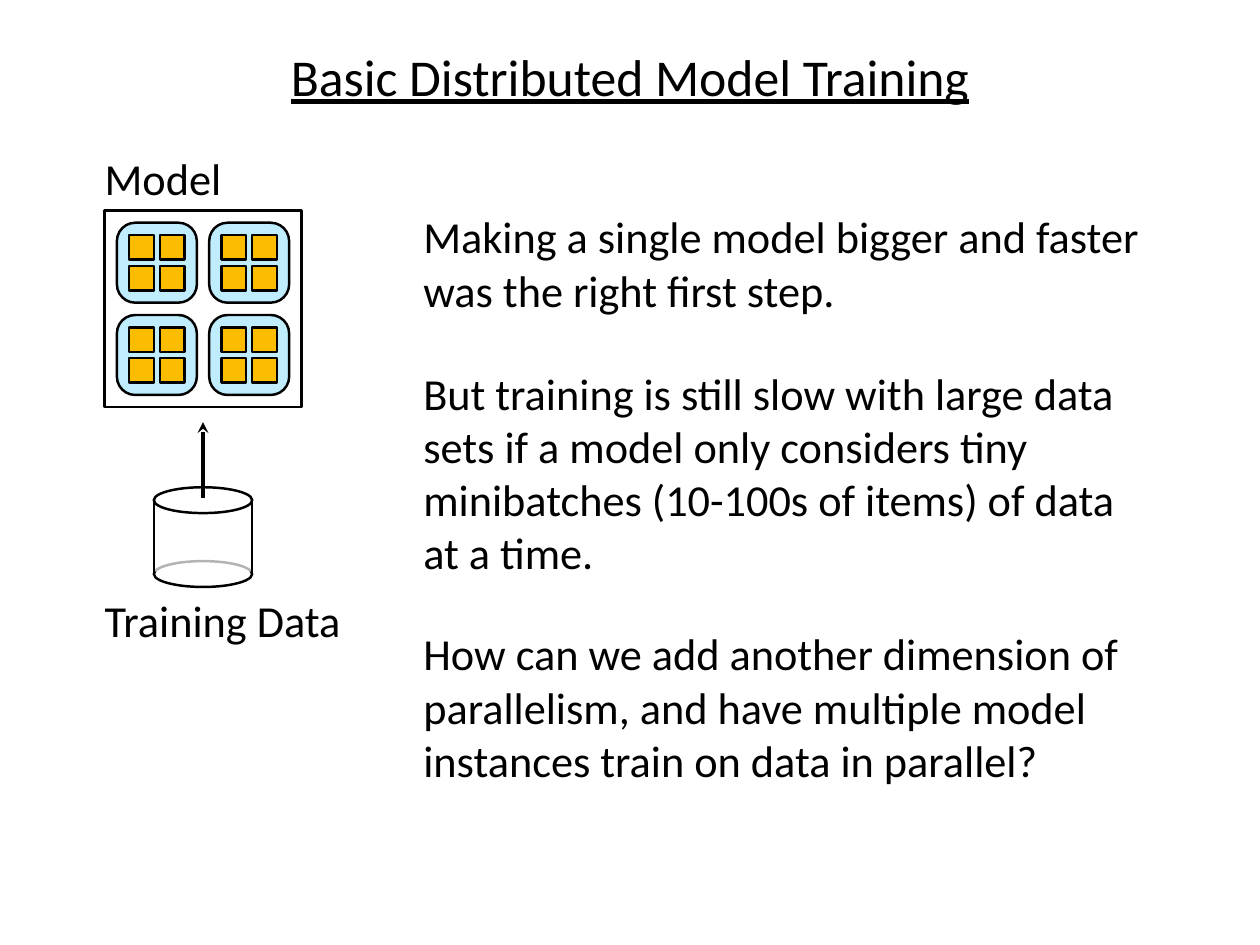
from itertools import product

from lxml import etree
from pptx import Presentation, util as u
from pptx.dml.color import RGBColor
from pptx.enum import shapes, text
from pptx.oxml.ns import qn

HUES = {"ink": "000000", "node": "C0EDFE", "core": "FCBD00", "white": "FFFFFF"}
FONT = "Calibri"
CELL = u.Pt(10)
COLS, ROWS = 102.4, 76.8
KIND = shapes.MSO_SHAPE


def grid(*cells):
    return [u.Emu(round(n * CELL)) for n in cells]


def hue(name):
    return RGBColor.from_string(HUES[name])


def write(frame, words, size=36, align=text.PP_ALIGN.LEFT, under=None):
    frame.word_wrap = True
    frame.vertical_anchor = text.MSO_ANCHOR.MIDDLE
    frame.margin_left = frame.margin_right = 0
    frame.margin_top = frame.margin_bottom = 0
    para = frame.paragraphs[0]
    para.alignment = align
    run = para.add_run()
    run.text = words
    run.font.name, run.font.size = FONT, u.Pt(size)
    run.font.underline = under
    run.font.color.rgb = hue("ink")


class Board:
    """Draws styled elements on one slide, measured in grid cells of ten points."""

    def __init__(self, deck):
        deck.slide_width, deck.slide_height = grid(COLS, ROWS)
        self.slide = deck.slides.add_slide(deck.slide_layouts[6])
        self.pad = self.slide.shapes

    def group(self):
        self.pad = self.slide.shapes.add_group_shape().shapes

    def leave(self):
        self.pad = self.slide.shapes

    def label(self, words, *box, **style):
        write(self.pad.add_textbox(*grid(*box)).text_frame, words, **style)

    def shape(self, kind, *box, fill=None, line=2, alpha=None, bend=None):
        item = self.pad.add_shape(kind, *grid(*box))
        item.shadow.inherit = False
        if bend is not None:
            item.adjustments[0] = bend
        if fill:
            item.fill.solid()
            item.fill.fore_color.rgb = hue(fill)
        else:
            item.fill.background()
        if alpha is not None:
            tint = item.fill._xPr.find(".//" + qn("a:srgbClr"))
            etree.SubElement(tint, qn("a:alpha")).set("val", str(alpha * 1000))
        if line:
            item.line.color.rgb, item.line.width = hue("ink"), u.Pt(line)
        else:
            item.line.fill.background()

    def line(self, *ends, width=2, arrow=False):
        item = self.pad.add_connector(shapes.MSO_CONNECTOR.STRAIGHT, *grid(*ends))
        item.line.color.rgb, item.line.width = hue("ink"), u.Pt(width)
        if arrow:
            tip = etree.SubElement(item.line._get_or_add_ln(), qn("a:tailEnd"))
            tip.set("type", "stealth")
        etree.SubElement(item._element.spPr, qn("a:effectLst"))

    def node(self, x, y):
        self.group()
        self.shape(KIND.ROUNDED_RECTANGLE, x, y, 6.5, 6.5, fill="node", bend=0.23)
        for col, row in product(range(2), repeat=2):
            self.shape(KIND.RECTANGLE, x + 1 + 2.5 * col, y + 1 + 2.5 * row,
                       2, 2, fill="core")
        self.leave()

    def drum(self, x, y, wide, tall, lid):
        mid = y + lid / 2
        self.shape(KIND.OVAL, x, y + tall, wide, lid)
        self.shape(KIND.RECTANGLE, x, mid + 0.2, wide, tall - 0.4,
                   fill="white", line=None, alpha=70)
        self.shape(KIND.OVAL, x, y, wide, lid)
        for side in (x, x + wide):
            self.line(side, mid, side, mid + tall)


def main():
    deck = Presentation()
    board = Board(deck)
    left, top, side = 8.5, 17.1, 16
    axis = left + side / 2

    board.label("Model", left, 12, 10.1, 4.9)
    for row, col in product(range(2), repeat=2):
        board.node(left + 1 + 7.5 * col, top + 1 + 7.5 * row)
    board.shape(KIND.RECTANGLE, left, top, side, side)

    board.group()
    board.drum(axis - 4, 39.6, 8, 6, 2.1)
    board.line(axis, 40.5, axis, 34.3, width=3, arrow=True)
    board.label("Training Data", left, 47.9, 20.3, 4.9)
    board.leave()

    board.label("Basic Distributed Model Training", 0.75, 3.3, COLS - 1.5, 5.7,
                size=42, align=text.PP_ALIGN.CENTER, under=True)
    for words, y, tall in (
        ("Making a single model bigger and faster was the right first step.",
         16.85, 9),
        ("But training is still slow with large data sets if a model only "
         "considers tiny minibatches (10-100s of items) of data at a time.",
         29.8, 17.2),
        ("How can we add another dimension of parallelism, and have multiple "
         "model instances train on data in parallel?", 50.85, 13.1),
    ):
        board.label(words, 34.4, y, 58.3, tall)
    deck.save("out.pptx")


if __name__ == "__main__":
    main()
